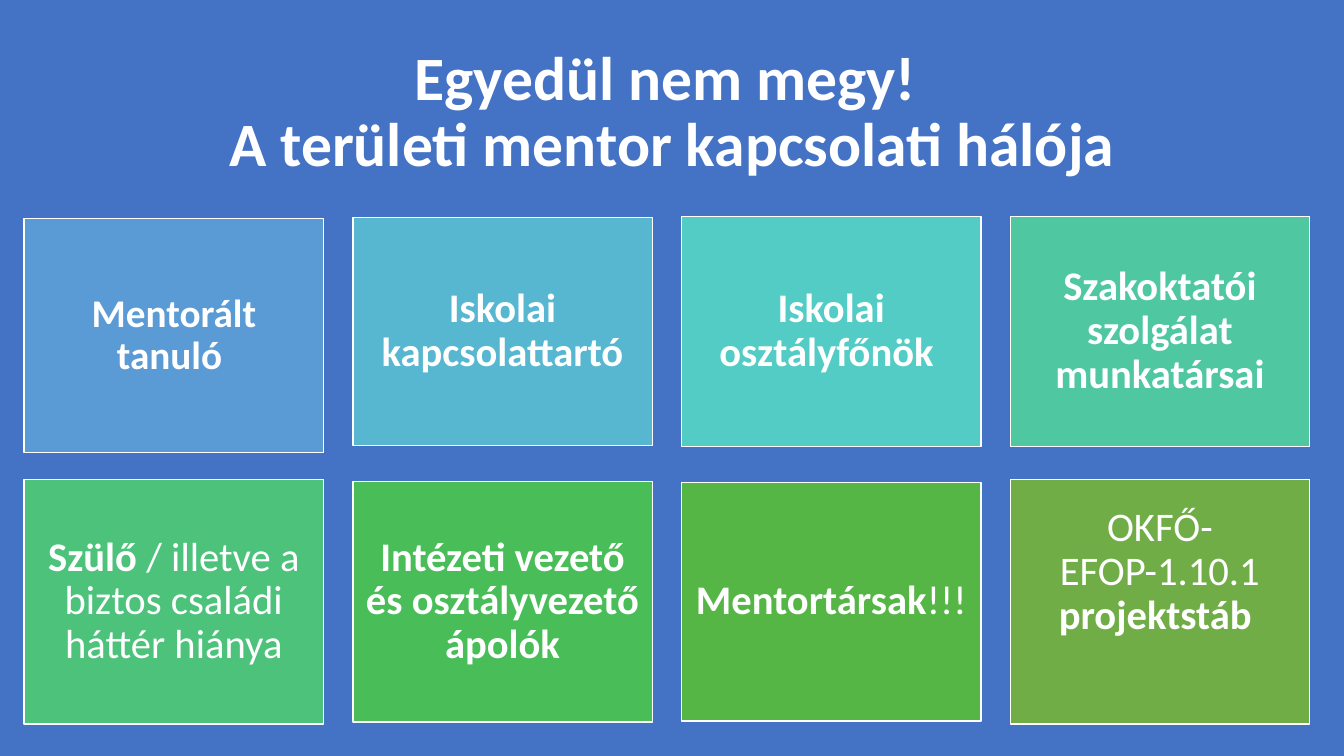
from pptx import Presentation
from pptx import util as u
from pptx.dml.color import RGBColor
from pptx.enum import shapes, text

WIDTH, HEIGHT = 13.33, 7.5
LEFT, COLUMN_STEP, TILE_WIDTH = 0.24, 3.26, 2.97
INSET = 0.12


def color(value):
    return RGBColor.from_string(value)


class Deck:
    font_name = "Calibri"
    foreground = "FFFFFF"
    background = "4472C4"

    def __init__(self):
        self.presentation = Presentation()
        self.presentation.slide_width = u.Inches(WIDTH)
        self.presentation.slide_height = u.Inches(HEIGHT)
        self.slide = self.presentation.slides.add_slide(self.presentation.slide_layouts[6])
        fill = self.slide.background.fill
        fill.solid()
        fill.fore_color.rgb = color(self.background)

    def style_text(self, frame, size):
        frame.word_wrap = True
        frame.vertical_anchor = text.MSO_ANCHOR.MIDDLE
        paragraph = frame.paragraphs[0]
        paragraph.alignment = text.PP_ALIGN.CENTER
        paragraph.line_spacing = 0.9
        paragraph.font.name = self.font_name
        paragraph.font.size = u.Pt(size)
        paragraph.font.color.rgb = color(self.foreground)
        return paragraph

    def title(self, lines, left, top, width, height, size):
        box = self.slide.shapes.add_textbox(*map(u.Inches, (left, top, width, height)))
        paragraph = self.style_text(box.text_frame, size)
        paragraph.text = "\v".join(lines)
        paragraph.font.bold = True

    def tile(self, column, center, height, fill, runs, size=29, bottom=INSET):
        left = LEFT + column * COLUMN_STEP
        shape = self.slide.shapes.add_shape(
            shapes.MSO_SHAPE.RECTANGLE,
            *map(u.Inches, (left, center - height / 2, TILE_WIDTH, height)))
        shape.shadow.inherit = False
        shape.fill.solid()
        shape.fill.fore_color.rgb = color(fill)
        shape.line.color.rgb = color(self.foreground)
        shape.line.width = u.Pt(1)
        frame = shape.text_frame
        frame.margin_left = frame.margin_right = frame.margin_top = u.Inches(INSET)
        frame.margin_bottom = u.Inches(bottom)
        paragraph = self.style_text(frame, size)
        for words, bold in runs:
            run = paragraph.add_run()
            run.text = words
            run.font.bold = bold


def main():
    deck = Deck()
    deck.title(["Egyedül nem megy! ", "A területi mentor kapcsolati hálója"],
               0.92, 0.4, 11.5, 1.45, 44)

    upper, lower = 3.29, 5.97
    deck.tile(0, 3.33, 2.32, "5B9BD5", [("Mentorált tanuló ", True)], size=28)
    deck.tile(1, upper, 2.26, "57B7D1", [("Iskolai kapcsolattartó", True)])
    deck.tile(2, upper, 2.28, "53CCC5", [("Iskolai osztályfőnök ", True)])
    deck.tile(3, upper, 2.28, "4FC7A0", [("Szakoktatói szolgálat munkatársai", True)])
    deck.tile(0, lower, 2.43, "4CC27B",
              [("Szülő ", True), ("/ illetve a biztos családi háttér hiánya", False)])
    deck.tile(1, lower, 2.39, "48BD58", [("Intézeti vezető és osztályvezető ápolók", True)])
    deck.tile(2, lower, 2.37, "55B646", [("Mentortársak", True), ("!!! ", False)])
    deck.tile(3, lower, 2.43, "70AD47",
              [("OKFŐ- EFOP-1.10.1 ", False), ("projektstáb ", True)], bottom=0.7)
    deck.presentation.save("out.pptx")


if __name__ == "__main__":
    main()
